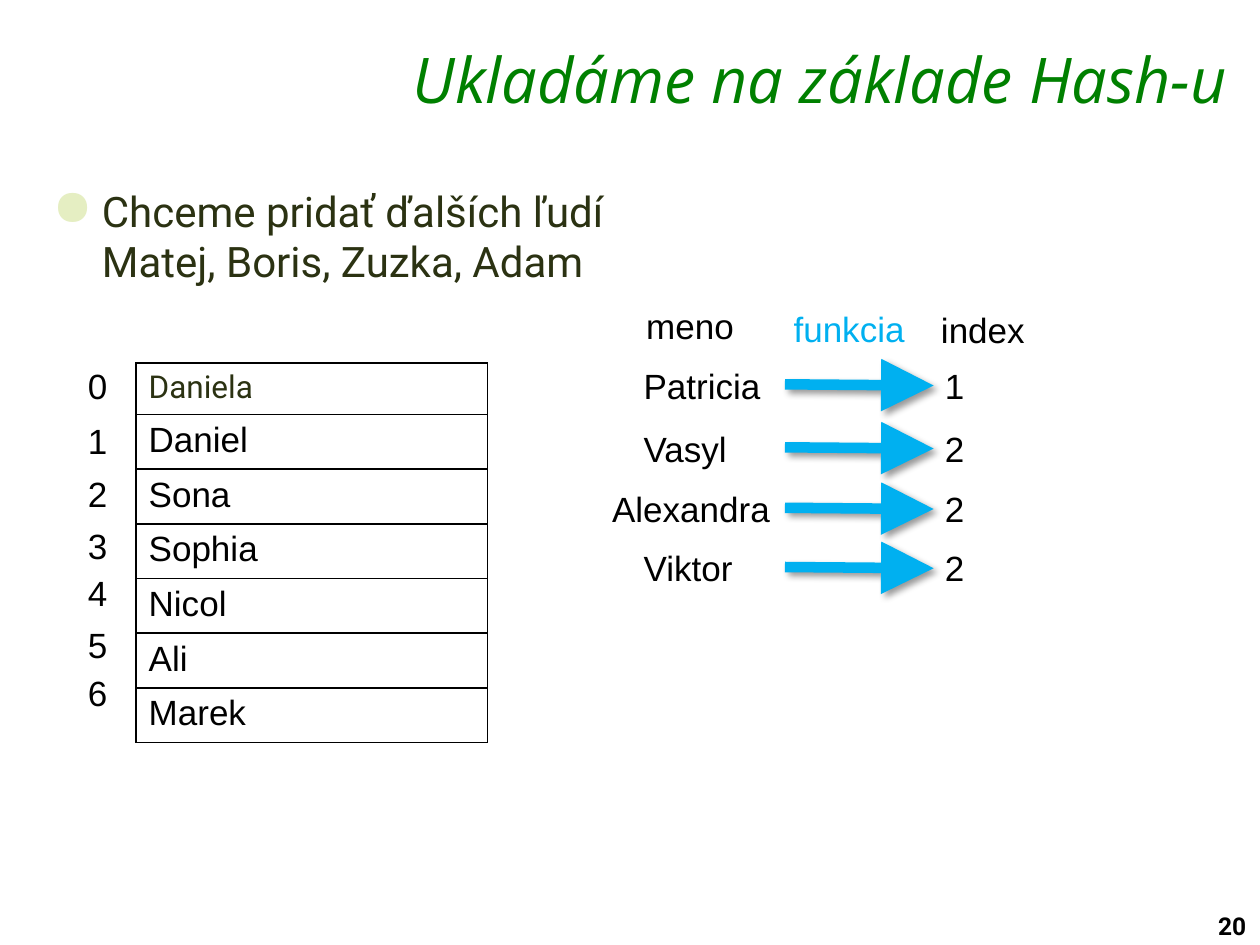
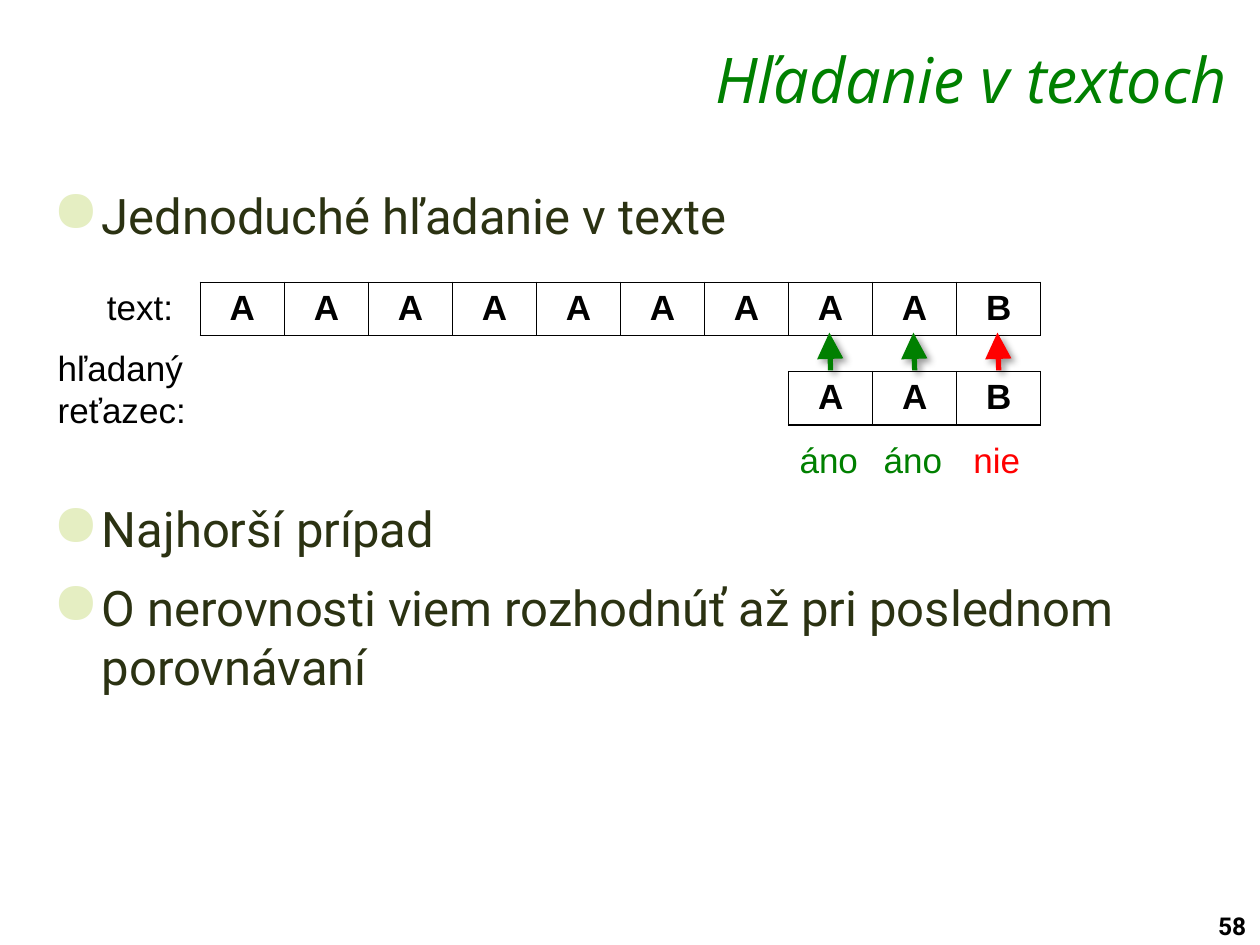
"""Builds two slides about hashing names and searching in texts."""
import pptx
import pptx.dml.color
import pptx.enum.shapes
import pptx.enum.text
import pptx.oxml
import pptx.oxml.ns
import pptx.util
from pptx.util import Inches

COLORS = {
    "title": "008000", "body": "2B3212", "bullet": "E5EEC2", "text": "000000",
    "function": "00B0F0", "yes": "008000", "no": "FF0000", "cell": "FFFFFF",
}
TITLE_FONT, BODY_FONT, LABEL_FONT = "Open Sans", "Roboto", "Arial"
LABEL_HEIGHT = 0.44
ALIGN = pptx.enum.text.PP_ALIGN

HASH_TITLE, HASH_NUMBER = "Ukladáme na základe Hash-u", "20"
HASH_BULLETS = ["Chceme pridať ďalších ľudí\nMatej, Boris, Zuzka, Adam"]
STORED_NAMES = ["Daniela", "Daniel", "Sona", "Sophia", "Nicol", "Ali", "Marek"]
STORED_TOPS = [2.84, 3.28, 3.7, 4.11, 4.49, 4.9, 5.28]
MAPPING_HEADS = [
    ("meno", 5.03, 2.37, 0.9, "text"),
    ("funkcia", 6.2, 2.39, 1.09, "function"),
    ("index", 7.37, 2.4, 0.87, "text"),
]
MAPPINGS = [
    ("Patricia", 5.01, 2.84, 1.14, "1"),
    ("Vasyl", 5.01, 3.34, 0.87, "2"),
    ("Alexandra", 4.76, 3.82, 1.47, "2"),
    ("Viktor", 5.01, 4.29, 0.91, "2"),
]

SEARCH_TITLE, SEARCH_NUMBER = "Hľadanie v textoch", "58"
SEARCH_BULLETS = ["Jednoduché hľadanie v texte"]
WORST_CASE_BULLETS = [
    "Najhorší prípad",
    "O nerovnosti viem rozhodnúť až pri poslednom porovnávaní",
]
SEARCHED_TEXT, PATTERN = "AAAAAAAAAB", "AAB"
TEXT_LEFT, LETTER_WIDTH = 1.59, 0.667
SEARCH_LABELS = [("text:", 0.75, 2.22, 0.73, 0.44), ("hľadaný\nreťazec:", 0.36, 2.7, 1.25, 0.77)]
COMPARISONS = [("áno", 0.67, "yes"), ("áno", 0.67, "yes"), ("nie", 0.58, "no")]


def rgb(name):
    return pptx.dml.color.RGBColor.from_string(COLORS[name])


def add_xml(parent, xml):
    namespace = pptx.oxml.ns.nsdecls("a")
    parent.append(pptx.oxml.parse_xml(xml.replace(" ", f" {namespace} ", 1)))


def write(para, text, font, size, color="text", bold=False, italic=False):
    for number, line in enumerate(text.split("\n")):
        if number:
            para.add_line_break()
        span = para.add_run()
        span.text = line
        span.font.name = font
        span.font.size = pptx.util.Pt(size)
        span.font.color.rgb = rgb(color)
        span.font.bold = bold
        span.font.italic = italic


def add_box(page, left, top, width, height, wrap=False):
    box = page.shapes.add_textbox(*map(Inches, (left, top, width, height)))
    box.text_frame.word_wrap = wrap
    return box.text_frame


def add_label(page, text, left, top, width, height=LABEL_HEIGHT, color="text"):
    frame = add_box(page, left, top, width, height)
    for number, line in enumerate(text.split("\n")):
        para = frame.add_paragraph() if number else frame.paragraphs[0]
        write(para, line, LABEL_FONT, 20, color)


def add_bullets(page, items, size, top, height):
    frame = add_box(page, 0.32, top, 9.38, height, wrap=True)
    frame.margin_top = Inches(0.07)
    for number, item in enumerate(items):
        para = frame.add_paragraph() if number else frame.paragraphs[0]
        properties = para._p.get_or_add_pPr()
        properties.set("marL", str(Inches(0.39)))
        properties.set("indent", str(-Inches(0.39)))
        add_xml(properties, f'<a:buClr ><a:srgbClr val="{COLORS["bullet"]}"/></a:buClr>')
        add_xml(properties, '<a:buSzPct val="120000"/>')
        add_xml(properties, '<a:buChar char="●"/>')
        if number:
            para.space_before = pptx.util.Pt(size * 0.2)
        para.space_after = pptx.util.Pt(size * 0.2)
        write(para, item, BODY_FONT, size, "body")


def add_arrow(page, start, end, color, weight):
    kind = pptx.enum.shapes.MSO_CONNECTOR.STRAIGHT
    arrow = page.shapes.add_connector(kind, *map(Inches, start + end))
    arrow.line.color.rgb = rgb(color)
    arrow.line.width = pptx.util.Pt(weight)
    add_xml(arrow.line._get_or_add_ln(), '<a:tailEnd type="triangle" w="lg" len="lg"/>')
    add_xml(arrow._element.spPr,
            '<a:effectLst ><a:outerShdw blurRad="50800" dist="38100" dir="2700000" '
            'algn="tl" rotWithShape="0"><a:srgbClr val="000000"><a:alpha val="40000"/>'
            '</a:srgbClr></a:outerShdw></a:effectLst>')


def add_grid(page, rows, left, top, width, heights):
    columns = len(rows[0])
    frame = page.shapes.add_table(
        len(rows), columns, *map(Inches, (left, top, width, sum(heights))))
    table = frame.table
    table.first_row = table.horz_banding = False
    for column in table.columns:
        column.width = Inches(width / columns)
    for row, height in zip(table.rows, heights):
        row.height = Inches(height)
    for cell in table.iter_cells():
        cell.margin_bottom = Inches(0.04)
        for side in "LRTB":
            add_xml(cell._tc.get_or_add_tcPr(),
                    f'<a:ln{side} w="12700"><a:solidFill><a:srgbClr val="{COLORS["text"]}"/>'
                    f'</a:solidFill></a:ln{side}>')
        cell.fill.solid()
        cell.fill.fore_color.rgb = rgb("cell")
    return table


def add_letters(page, letters, left, top):
    table = add_grid(page, [letters], left, top, len(letters) * LETTER_WIDTH, [0.41])
    for cell, letter in zip(table.iter_cells(), letters):
        para = cell.text_frame.paragraphs[0]
        para.alignment = ALIGN.CENTER
        write(para, letter, LABEL_FONT, 20, bold=True)


def add_page(deck, title, number):
    page = deck.slides.add_slide(deck.slide_layouts[6])
    write(add_box(page, 9.57, 7.18, 0.43, 0.32).paragraphs[0], number, BODY_FONT, 14, bold=True)
    frame = add_box(page, 2.29, 0.31, 7.55, 0.58, wrap=True)
    frame.margin_top = Inches(0.01)
    para = frame.paragraphs[0]
    para.alignment = ALIGN.RIGHT
    write(para, title, TITLE_FONT, 36, "title", italic=True)
    return page


def build_hash_page(deck):
    page = add_page(deck, HASH_TITLE, HASH_NUMBER)
    add_bullets(page, HASH_BULLETS, 24, 1.4, 1.25)
    for text, left, top, width, color in MAPPING_HEADS:
        add_label(page, text, left, top, width, color=color)
    for name, left, top, width, index in MAPPINGS:
        add_label(page, name, left, top, width)
        add_label(page, index, 7.4, top, 0.36)
        add_arrow(page, (6.23, top + 0.21), (7.41, top + 0.22), "function", 6)
    heights = [0.41] + [0.434] * (len(STORED_NAMES) - 1)
    table = add_grid(page, [[name] for name in STORED_NAMES], 1.08, 2.88, 2.79, heights)
    for index, (name, top) in enumerate(zip(STORED_NAMES, STORED_TOPS)):
        style = (LABEL_FONT, 20) if index else (BODY_FONT, 18, "body")
        write(table.cell(index, 0).text_frame.paragraphs[0], name, *style)
        add_label(page, str(index), 0.6, top, 0.36)


def build_search_page(deck):
    page = add_page(deck, SEARCH_TITLE, SEARCH_NUMBER)
    add_bullets(page, SEARCH_BULLETS, 28, 1.4, 0.7)
    add_bullets(page, WORST_CASE_BULLETS, 28, 3.89, 3.2)
    pattern_left = TEXT_LEFT + (len(SEARCHED_TEXT) - len(PATTERN)) * LETTER_WIDTH
    add_letters(page, SEARCHED_TEXT, TEXT_LEFT, 2.24)
    add_letters(page, PATTERN, pattern_left, 2.95)
    for label in SEARCH_LABELS:
        add_label(page, *label)
    for number, (answer, width, color) in enumerate(COMPARISONS):
        middle = pattern_left + (number + 0.5) * LETTER_WIDTH
        add_arrow(page, (middle, 2.94), (middle - 0.01, 2.64), color, 3)
        add_label(page, answer, middle - 0.01 - width / 2, 3.43, width, color=color)


def main():
    deck = pptx.Presentation()
    deck.slide_width, deck.slide_height = Inches(10), Inches(7.5)
    build_hash_page(deck)
    build_search_page(deck)
    deck.save("out.pptx")


if __name__ == "__main__":
    main()
